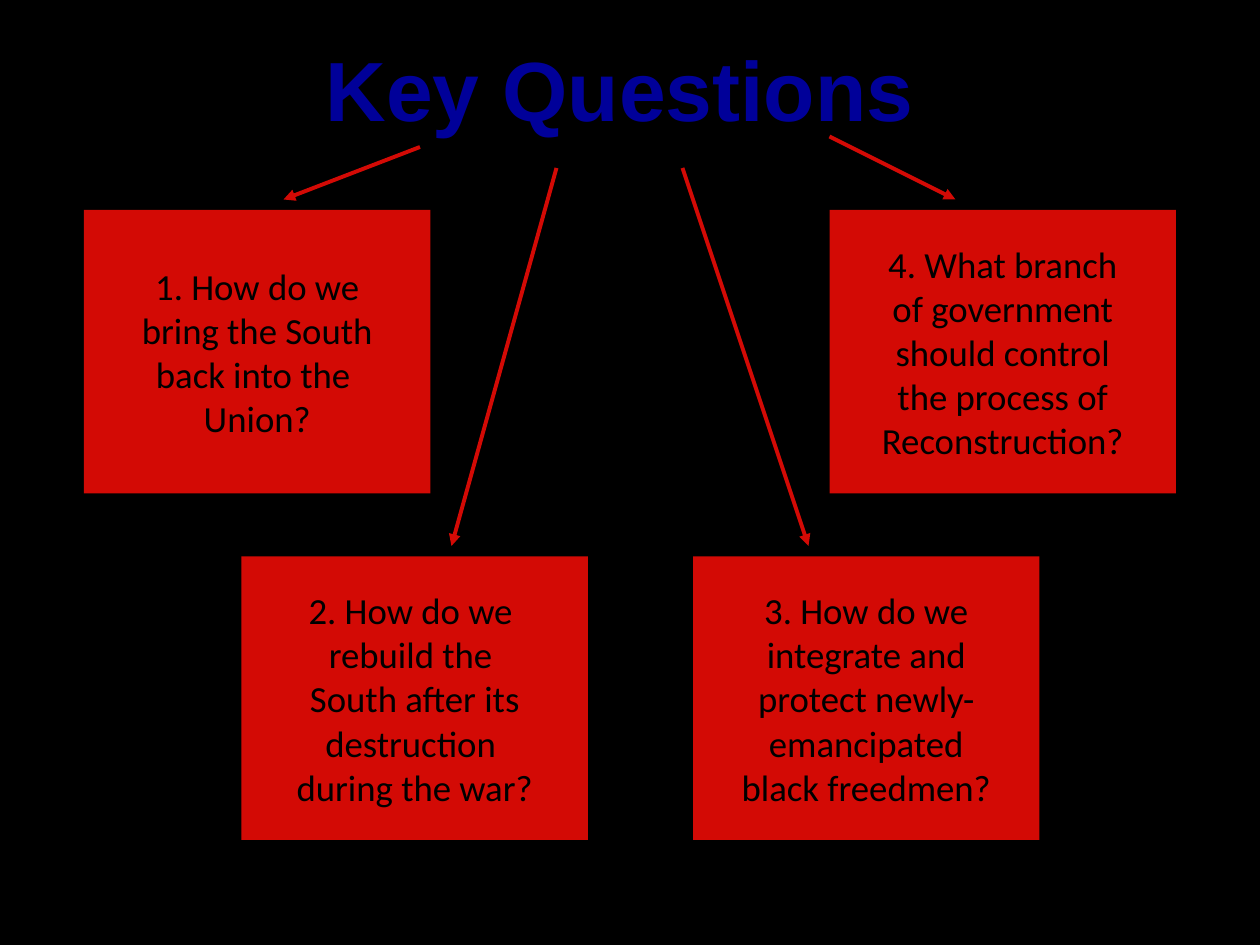
"""Build the Key Questions slide: a heading with arrows to four questions."""
import pptx
import pptx.dml.color
import pptx.enum.shapes
import pptx.enum.text
import pptx.oxml
import pptx.oxml.ns
import pptx.util

BLACK = pptx.dml.color.RGBColor(0x00, 0x00, 0x00)
NAVY = pptx.dml.color.RGBColor(0x00, 0x00, 0x99)
RED = pptx.dml.color.RGBColor(0xD3, 0x0A, 0x05)

HEADING_FORMAT = {"name": "Arial", "size": pptx.util.Pt(48), "bold": True}
QUESTION_FORMAT = {"name": "Calibri", "size": pptx.util.Pt(21), "bold": False}

deck = pptx.Presentation()
deck.slide_width = pptx.util.Inches(10)
deck.slide_height = pptx.util.Inches(7.5)
COLUMN = deck.slide_width / 120
ROW = deck.slide_height / 90


def on_grid(*cells):
    """Turn alternating column and row counts into slide lengths."""
    return [round(cell * (ROW if i % 2 else COLUMN)) for i, cell in enumerate(cells)]


def write(frame, words, font_format, color):
    """Write one centred paragraph in the given format."""
    frame.word_wrap = True
    paragraph = frame.paragraphs[0]
    paragraph.text = words
    paragraph.alignment = pptx.enum.text.PP_ALIGN.CENTER
    for run in paragraph.runs:
        for attribute, value in font_format.items():
            setattr(run.font, attribute, value)
        run.font.color.rgb = color


slide = deck.slides.add_slide(deck.slide_layouts[6])
slide.background.fill.solid()
slide.background.fill.fore_color.rgb = BLACK

heading = slide.shapes.add_textbox(*on_grid(4, 3, 110, 10.8))
write(heading.text_frame, "Key Questions", HEADING_FORMAT, NAVY)

questions = [
    (8, 20, "1. How do we\nbring the South\nback into the \nUnion?"),
    (23, 53, "2. How do we \nrebuild the \nSouth after its\ndestruction \nduring the war?"),
    (66, 53, "3. How do we\nintegrate and\nprotect newly-\nemancipated\nblack freedmen?"),
    (79, 20, "4. What branch\nof government\nshould control\nthe process of\nReconstruction?"),
]
for column, row, words in questions:
    question = slide.shapes.add_shape(
        pptx.enum.shapes.MSO_SHAPE.RECTANGLE, *on_grid(column, row, 33, 27))
    question.shadow.inherit = False
    question.fill.solid()
    question.fill.fore_color.rgb = RED
    question.line.fill.background()
    question.text_frame.vertical_anchor = pptx.enum.text.MSO_ANCHOR.MIDDLE
    write(question.text_frame, words, QUESTION_FORMAT, BLACK)

pointers = [(40, 14, 27, 19), (53, 16, 43, 52), (65, 16, 77, 52), (79, 13, 91, 19)]
for ends in pointers:
    pointer = slide.shapes.add_connector(
        pptx.enum.shapes.MSO_CONNECTOR.STRAIGHT, *on_grid(*ends))
    pointer.line.color.rgb = RED
    pointer.line.width = pptx.util.Pt(2.25)
    arrowhead = pptx.oxml.parse_xml(
        f'<a:tailEnd {pptx.oxml.ns.nsdecls("a")} type="triangle"/>')
    pointer.line._get_or_add_ln().append(arrowhead)
    no_shadow = pptx.oxml.parse_xml(f'<a:effectLst {pptx.oxml.ns.nsdecls("a")}/>')
    pointer._element.spPr.append(no_shadow)

deck.save("out.pptx")
